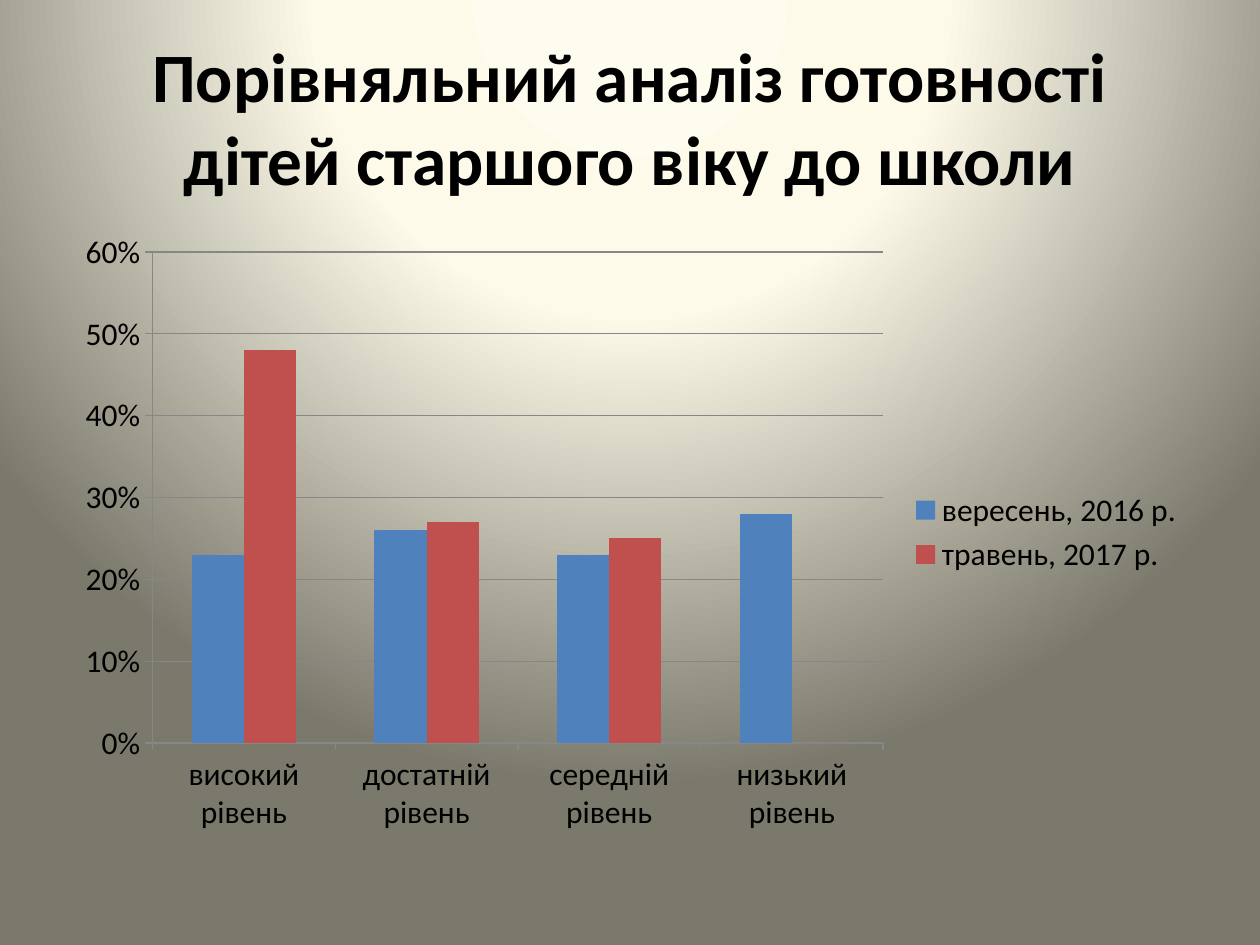
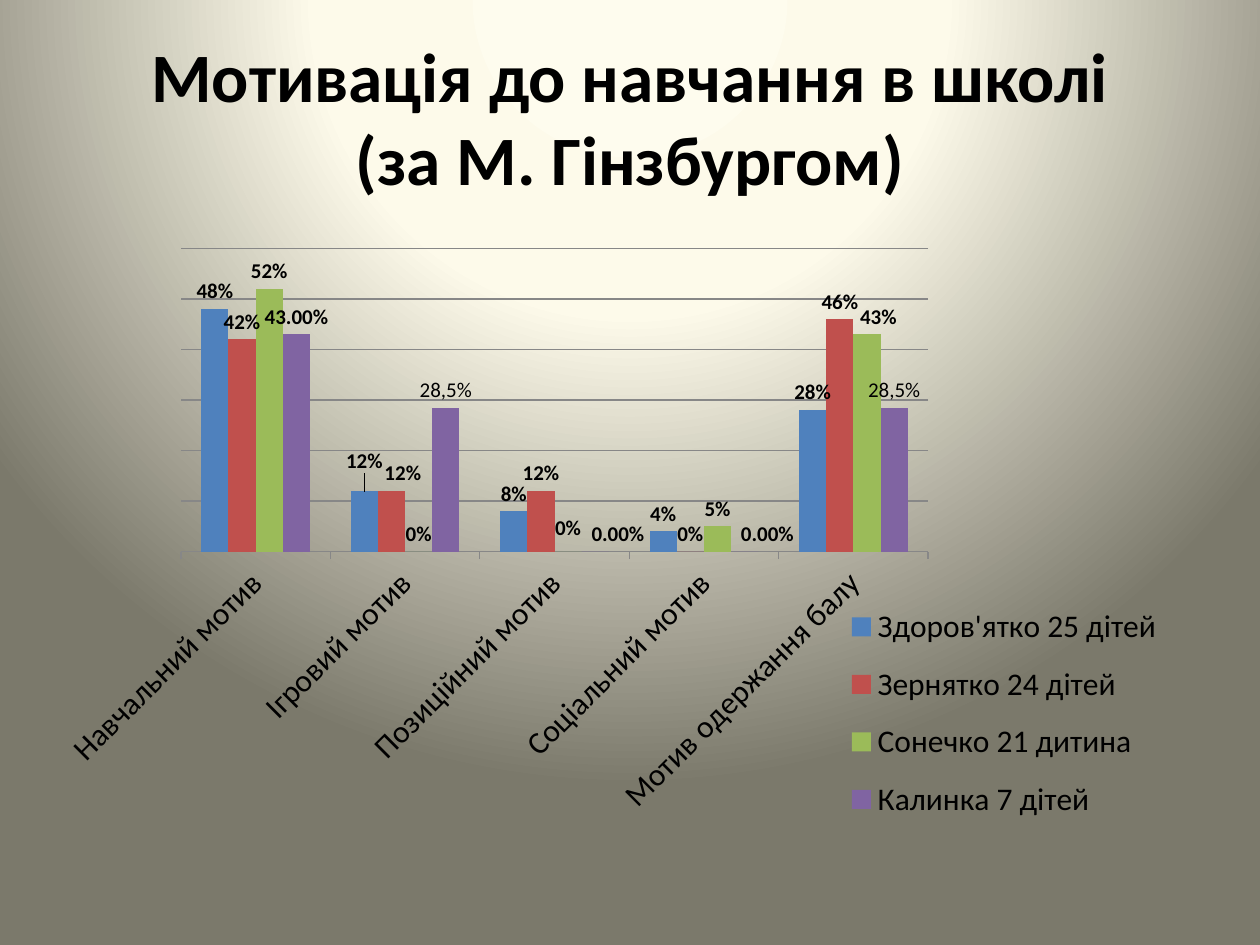
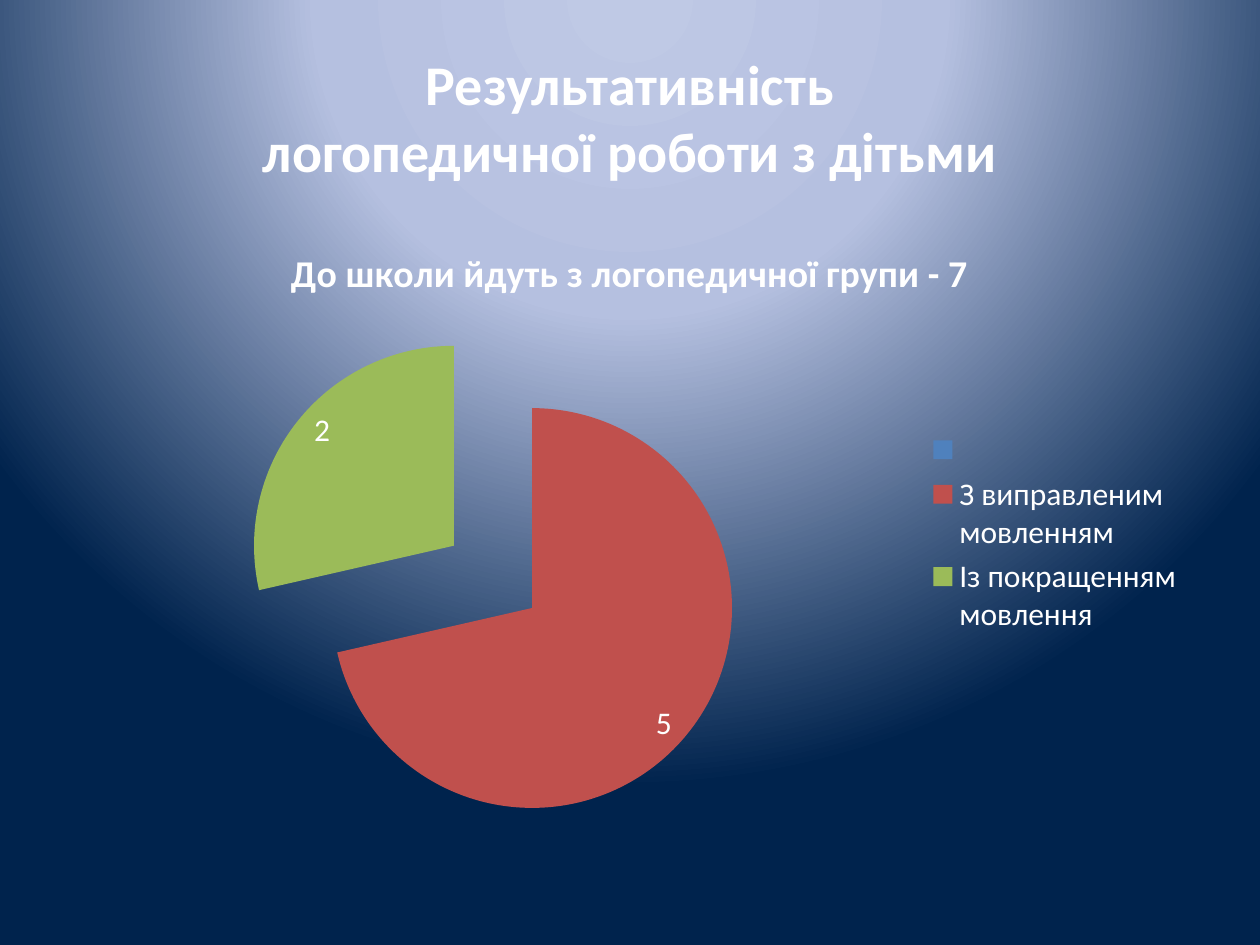
from dataclasses import dataclass

from pptx import Presentation
from pptx.chart.chart import Chart
from pptx.chart.data import CategoryChartData
from pptx.dml.color import RGBColor
from pptx.enum.chart import XL_CHART_TYPE, XL_LABEL_POSITION, XL_LEGEND_POSITION, XL_TICK_MARK
from pptx.enum.text import MSO_ANCHOR, PP_ALIGN
from pptx.oxml import parse_xml
from pptx.oxml.ns import nsdecls, qn
from pptx.slide import Slide
from pptx.util import Emu, Pt

COLUMNS = XL_CHART_TYPE.COLUMN_CLUSTERED
PIE = XL_CHART_TYPE.PIE
LABEL_OUTSIDE = XL_LABEL_POSITION.OUTSIDE_END
LABEL_BEST_FIT = XL_LABEL_POSITION.BEST_FIT
LEGEND_RIGHT = XL_LEGEND_POSITION.RIGHT
TICK_OUTSIDE = XL_TICK_MARK.OUTSIDE
TICK_NONE = XL_TICK_MARK.NONE
CENTER = PP_ALIGN.CENTER
MIDDLE = MSO_ANCHOR.MIDDLE

EMU_PER_PX = 9144
FONT = "Calibri"
COLORS = {
    "black": "000000",
    "white": "FFFFFF",
    "grid": "878787",
    "blue": "4F81BD",
    "red": "C0504D",
    "green": "9BBB59",
    "purple": "8064A2",
}
SERIES_COLORS = ("blue", "red", "green", "purple")
CREAM = ("FEFCEE", "FDFAEA", "7B796B")
NAVY = ("BFC9E5", "B5C0E0", "00234D")
GRADIENT_STOPS = (0, 40, 100)


@dataclass(frozen=True)
class Box:
    left: int
    top: int
    width: int
    height: int

    def emu(self) -> tuple[Emu, ...]:
        sides = (self.left, self.top, self.width, self.height)
        return tuple(Emu(side * EMU_PER_PX) for side in sides)


@dataclass(frozen=True)
class PointLabel:
    point: int
    shift: tuple[float, float] = (0, 0)
    text: str = ""


@dataclass(frozen=True)
class Series:
    name: str
    values: tuple[float | None, ...]
    number_format: str = "0%"
    point_labels: tuple[PointLabel, ...] = ()


@dataclass(frozen=True)
class Page:
    title_lines: tuple[str, ...]
    title_size: float
    text_color: str
    gradient: tuple[str, str, str]
    categories: tuple[str, ...]
    series: tuple[Series, ...]


TITLE_BOX = Box(50, 30, 900, 125)
CHART_BOX = Box(50, 175, 900, 495)

READINESS = Page(
    ("Порівняльний аналіз готовності дітей старшого віку до школи",),
    39.6, "black", CREAM,
    ("високий рівень", "достатній рівень", "середній рівень", "низький рівень"),
    (
        Series("вересень, 2016 р.", (0.23, 0.26, 0.23, 0.28)),
        Series("травень, 2017 р.", (0.48, 0.27, 0.25, 0)),
    ),
)
MOTIVATION = Page(
    ("Мотивація до навчання в школі", "(за М. Гінзбургом)"),
    39.6, "black", CREAM,
    ("Навчальний мотив", "Ігровий мотив", "Позиційний мотив",
     "Соціальний мотив", "Мотив одержання балу"),
    (
        Series("Здоров'ятко 25 дітей", (0.48, 0.12, 0.08, 0.04, 0.28),
               point_labels=(PointLabel(1, (0, -0.02)),)),
        Series("Зернятко 24 дітей", (0.42, 0.12, 0.12, 0, 0.46),
               point_labels=(PointLabel(1, (0.01, 0)),)),
        Series("Сонечко 21 дитина", (0.52, 0, 0, 0.05, 0.43),
               point_labels=(PointLabel(2, (0, -0.01)), PointLabel(4, (0.01, 0)))),
        Series("Калинка 7 дітей", (0.43, 0.285, 0, 0, 0.285), "0.00%",
               (PointLabel(1, text="28,5%"), PointLabel(2, (0.02, 0)),
                PointLabel(3, (0.02, 0)), PointLabel(4, text="28,5%"))),
    ),
)
SPEECH = Page(
    ("Результативність", "логопедичної роботи з дітьми"),
    32, "white", NAVY,
    ("", "З виправленим мовленням", "Із покращенням мовлення"),
    (Series("До школи йдуть з логопедичної групи - 7", (None, 5, 2), "General"),),
)


def rgb(name: str) -> RGBColor:
    return RGBColor.from_string(COLORS[name])


def style_font(font, size: float, color: str, bold: bool = False) -> None:
    font.name = FONT
    font.size = Pt(size)
    font.bold = bold
    font.color.rgb = rgb(color)


def add_background(slide: Slide, gradient: tuple[str, str, str]) -> None:
    stops = "".join(
        f'<a:gs pos="{position * 1000}"><a:srgbClr val="{color}"/></a:gs>'
        for position, color in zip(GRADIENT_STOPS, gradient)
    )
    background = parse_xml(
        f'<p:bg {nsdecls("p", "a")}><p:bgPr><a:gradFill rotWithShape="1">'
        f'<a:gsLst>{stops}</a:gsLst><a:path path="circle">'
        '<a:fillToRect l="50000" t="-80000" r="50000" b="180000"/></a:path>'
        '</a:gradFill><a:effectLst/></p:bgPr></p:bg>'
    )
    slide.element.cSld.insert(0, background)


def add_title(slide: Slide, page: Page) -> None:
    frame = slide.shapes.add_textbox(*TITLE_BOX.emu()).text_frame
    frame.word_wrap = True
    frame.vertical_anchor = MIDDLE
    paragraph = frame.paragraphs[0]
    paragraph.alignment = CENTER
    for index, line in enumerate(page.title_lines):
        if index:
            paragraph.add_line_break()
        run = paragraph.add_run()
        run.text = line
        style_font(run.font, page.title_size, page.text_color, bold=True)


def add_page(presentation, page: Page) -> Slide:
    slide = presentation.slides.add_slide(presentation.slide_layouts[6])
    add_background(slide, page.gradient)
    add_title(slide, page)
    return slide


def add_chart(slide: Slide, page: Page, chart_type) -> Chart:
    data = CategoryChartData()
    data.categories = page.categories
    for series in page.series:
        data.add_series(series.name, series.values, series.number_format)
    chart = slide.shapes.add_chart(chart_type, *CHART_BOX.emu(), data).chart
    style_font(chart.font, 18, page.text_color)
    chart.has_title = False
    chart.has_legend = True
    chart.legend.position = LEGEND_RIGHT
    chart.legend.include_in_layout = False
    style_font(chart.legend.font, 18, page.text_color)
    return chart


def set_layout(parent, index: int, values: dict[str, str | float]) -> None:
    for layout in parent.findall(qn("c:layout")):
        parent.remove(layout)
    fields = "".join(f'<c:{name} val="{value}"/>' for name, value in values.items())
    parent.insert(index, parse_xml(
        f'<c:layout {nsdecls("c")}><c:manualLayout>{fields}</c:manualLayout></c:layout>'
    ))


def add_columns(slide: Slide, page: Page) -> Chart:
    chart = add_chart(slide, page, COLUMNS)
    plot = chart.plots[0]
    plot.gap_width = 150
    plot.overlap = 0
    plot.vary_by_categories = False
    for series, color in zip(plot.series, SERIES_COLORS):
        series.format.fill.solid()
        series.format.fill.fore_color.rgb = rgb(color)
    value_axis = chart.value_axis
    value_axis.minimum_scale = 0
    value_axis.maximum_scale = 0.6
    value_axis.major_unit = 0.1
    value_axis.has_major_gridlines = True
    value_axis.tick_labels.number_format = "0%"
    value_axis.tick_labels.number_format_is_linked = False
    for axis in (chart.category_axis, value_axis):
        axis.major_tick_mark = TICK_OUTSIDE
        axis.minor_tick_mark = TICK_NONE
        style_font(axis.tick_labels.font, 18, page.text_color)
    for part in (chart.category_axis, value_axis, value_axis.major_gridlines):
        part.format.line.color.rgb = rgb("grid")
        part.format.line.width = Pt(0.75)
    return chart


def add_column_labels(chart: Chart, page: Page) -> None:
    for plotted, series in zip(chart.plots[0].series, page.series):
        labels = plotted.data_labels
        labels.show_value = True
        labels.number_format = series.number_format
        labels.number_format_is_linked = False
        labels.position = LABEL_OUTSIDE
        style_font(labels.font, 12, page.text_color, bold=True)
        for point_label in series.point_labels:
            label = plotted.points[point_label.point].data_label
            if point_label.text:
                run = label.text_frame.paragraphs[0].add_run()
                run.text = point_label.text
                style_font(run.font, 12, page.text_color)
            else:
                style_font(label.font, 12, page.text_color, bold=True)
            label.position = LABEL_OUTSIDE
    for element, series in zip(chart.element.xpath(".//c:ser"), page.series):
        for point_label in series.point_labels:
            if any(point_label.shift):
                x, y = point_label.shift
                path = f'./c:dLbls/c:dLbl[c:idx/@val="{point_label.point}"]'
                set_layout(element.xpath(path)[0], 1, {"x": x, "y": y})
    for leader_lines in chart.element.xpath(".//c:showLeaderLines"):
        leader_lines.getparent().remove(leader_lines)


def add_motivation_chart(slide: Slide) -> None:
    chart = add_columns(slide, MOTIVATION)
    chart.value_axis.visible = False
    add_column_labels(chart, MOTIVATION)
    chart.element.xpath(".//c:catAx/c:txPr/a:bodyPr")[0].set("rot", "-2700000")
    edges = {"xMode": "edge", "yMode": "edge"}
    set_layout(chart.element.xpath(".//c:plotArea")[0], 0,
               {"layoutTarget": "inner", **edges, "x": 0.104, "y": 0.045, "w": 0.659, "h": 0.486})
    set_layout(chart.element.xpath(".//c:legend")[0], 1,
               {**edges, "x": 0.68, "y": 0.59, "w": 0.3, "h": 0.4})


def add_pie(slide: Slide, page: Page) -> None:
    chart = add_chart(slide, page, PIE)
    chart.has_title = True
    run = chart.chart_title.text_frame.paragraphs[0].add_run()
    run.text = page.series[0].name
    style_font(run.font, 21.6, page.text_color, bold=True)
    chart.chart_title.include_in_layout = False
    plot = chart.plots[0]
    plot.vary_by_categories = True
    for index in range(len(page.categories)):
        fill = plot.series[0].points[index].format.fill
        fill.solid()
        fill.fore_color.rgb = rgb(SERIES_COLORS[index])
    for properties in chart.element.xpath(".//c:dPt/c:spPr"):
        properties.addprevious(parse_xml(f'<c:explosion {nsdecls("c")} val="25"/>'))
    labels = plot.series[0].data_labels
    labels.show_value = True
    labels.show_percentage = False
    labels.position = LABEL_BEST_FIT
    style_font(labels.font, 18, page.text_color)


def main() -> None:
    presentation = Presentation()
    presentation.slide_width = Emu(1000 * EMU_PER_PX)
    presentation.slide_height = Emu(750 * EMU_PER_PX)
    add_columns(add_page(presentation, READINESS), READINESS)
    add_motivation_chart(add_page(presentation, MOTIVATION))
    add_pie(add_page(presentation, SPEECH), SPEECH)
    presentation.save("out.pptx")


if __name__ == "__main__":
    main()
